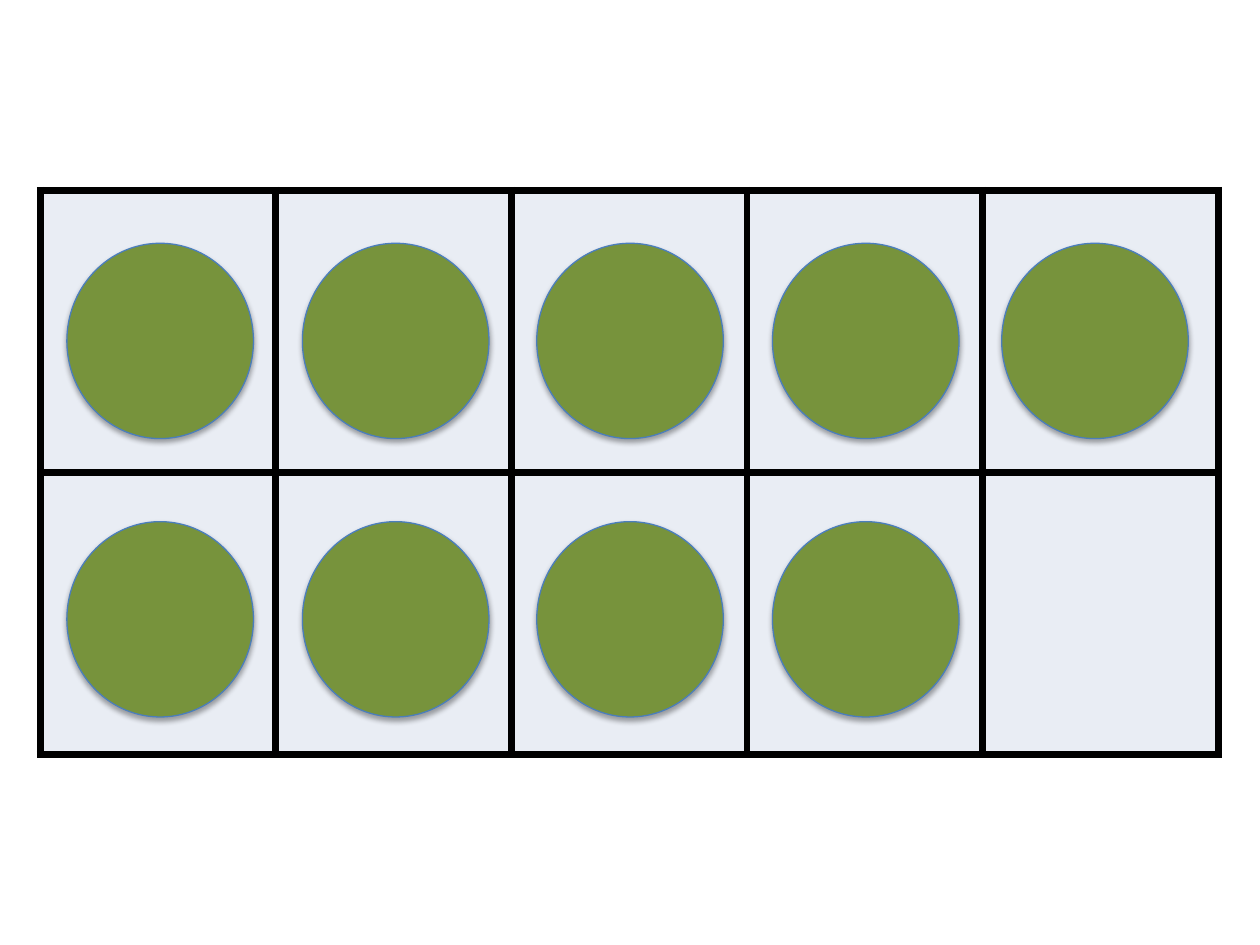
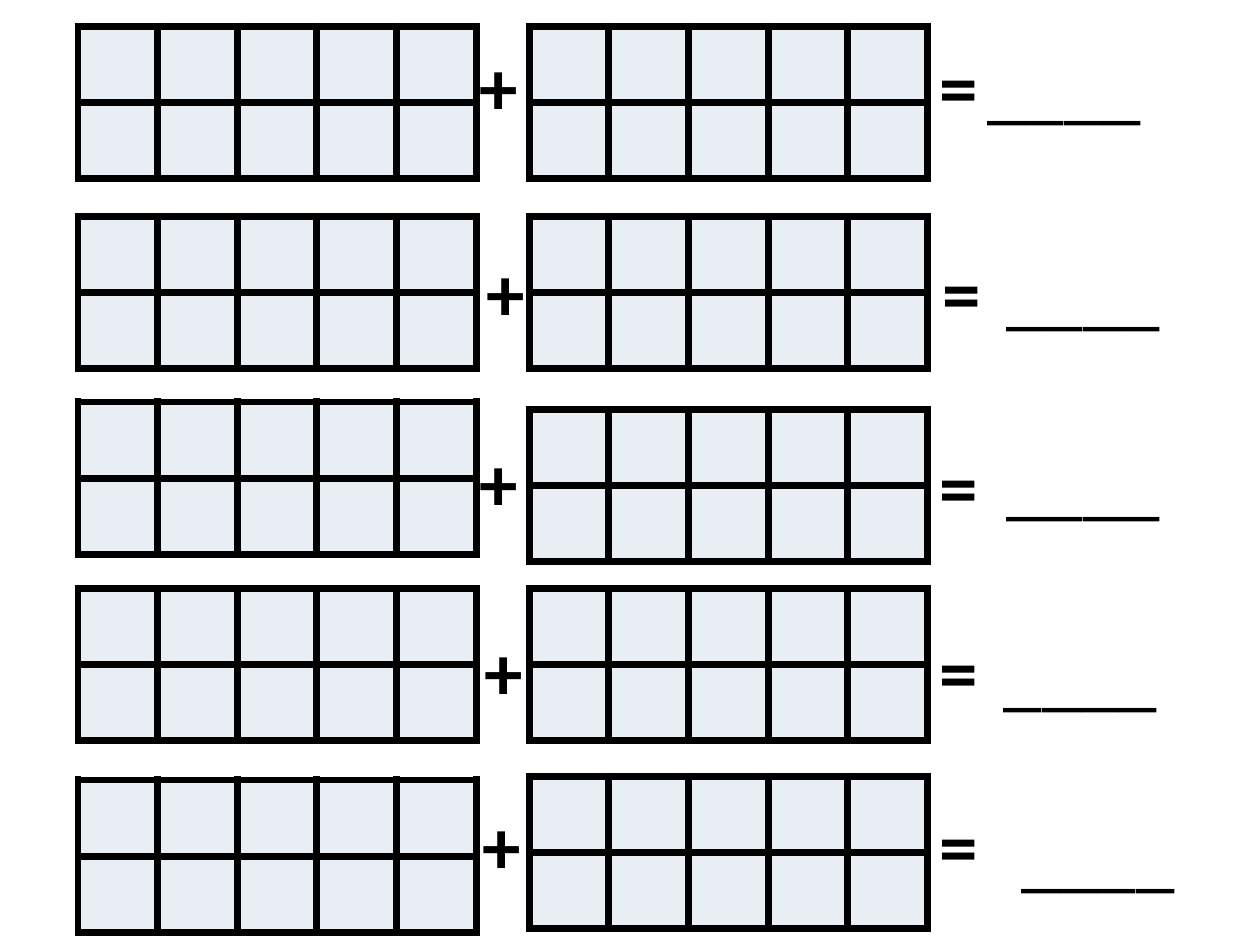
from pptx import Presentation, util as u
from pptx.dml import color
from pptx.enum import shapes, text
from pptx.oxml import parse_xml
from pptx.oxml.ns import nsdecls, qn

Pt = u.Pt
BLACK, CELL, GREEN, BLUE = "000000", "E9EDF4", "77933C", "4B7EBC"
EDGE = 4.5
COLS, ROWS = 5, 2
SIGN = {"name": "Calibri", "size": Pt(44), "bold": True}
BLANK = {**SIGN, "bold": False}

# Ten frame with counters: left edges by column, tops by row
DOT_X = [38.2, 172.8, 306.7, 441.4, 572.4]
DOT_Y = [139, 298.1]
DOTS = 9

# Addition rows: tops of both frames, then plus, equals and answer corners
SUMS = [
    (15.1, 15.1, (267.1, 18.7), (529.9, 18.7), (557.3, 18.7), "____"),
    (123.8, 123.8, (270.7, 136.1), (531.4, 136.1), (568.1, 136.1), "____"),
    (229.7, 234, (267.1, 244.8), (529.9, 247), (568.1, 244.8), "____"),
    (336.2, 336.2, (270, 352.8), (529.9, 352.8), (566.6, 354.2), "____"),
    (445.7, 443.5, (268.6, 452.2), (529.9, 452.2), (566.6, 457.2), " ____"),
]


def paint(fill, code):
    """Give a fill one solid colour."""
    fill.solid()
    fill.fore_color.rgb = color.RGBColor.from_string(code)


def style(item, values):
    for key, value in values.items():
        setattr(item, key, value)


def border(cell):
    """Draw the four edges of a cell."""
    props = cell._tc.get_or_add_tcPr()
    for spot, side in enumerate("LRTB"):
        props.insert(spot, parse_xml(
            f'<a:ln{side} {nsdecls("a")} w="{Pt(EDGE)}"><a:solidFill>'
            f'<a:srgbClr val="{BLACK}"/></a:solidFill></a:ln{side}>'))


def frame(slide, left, top, width, height):
    """Add an empty ten frame."""
    grid = slide.shapes.add_table(
        ROWS, COLS, Pt(left), Pt(top), Pt(width), Pt(height)).table
    style(grid, {"first_row": False, "horz_banding": False})
    for col in grid.columns:
        col.width = Pt(width / COLS)
    for row in grid.rows:
        row.height = Pt(height / ROWS)
    for cell in grid.iter_cells():
        paint(cell.fill, CELL)
        border(cell)


def dot(slide, left, top):
    """Add a round counter with a soft shadow below it."""
    disc = slide.shapes.add_shape(
        shapes.MSO_SHAPE.OVAL, Pt(left), Pt(top), Pt(106.6), Pt(111.6))
    paint(disc.fill, GREEN)
    paint(disc.line.fill, BLUE)
    disc.line.width = Pt(0.75)
    disc.shadow.inherit = False
    disc._element.spPr.find(qn("a:effectLst")).append(parse_xml(
        f'<a:outerShdw {nsdecls("a")} blurRad="{Pt(3.1)}" dist="{Pt(1.8)}" '
        f'dir="5400000" rotWithShape="0"><a:srgbClr val="{BLACK}">'
        '<a:alpha val="35000"/></a:srgbClr></a:outerShdw>'))


def label(slide, words, spot, width, font, wrap=False):
    """Add one line of large text."""
    left, top = spot
    box = slide.shapes.add_textbox(Pt(left), Pt(top), Pt(width), Pt(60.5))
    style(box.text_frame, {
        "word_wrap": wrap,
        "auto_size": text.MSO_AUTO_SIZE.SHAPE_TO_FIT_TEXT})
    run = box.text_frame.paragraphs[0].add_run()
    run.text = words
    style(run.font, font)
    paint(run.font.fill, BLACK)


def main():
    deck = Presentation()
    style(deck, {"slide_width": Pt(720), "slide_height": Pt(540)})
    bare = deck.slide_layouts[6]

    # Nine counters in a ten frame
    slide = deck.slides.add_slide(bare)
    frame(slide, 23, 108.7, 673.2, 322.6)
    for count in range(DOTS):
        row, col = divmod(count, COLS)
        dot(slide, DOT_X[col], DOT_Y[row])

    # Five additions with empty frames
    slide = deck.slides.add_slide(bare)
    for first, second, plus, equal, answer, line in SUMS:
        frame(slide, 44.6, first, 227.5, 87)
        frame(slide, 302.4, second, 227.5, 87)
        label(slide, "+", plus, 36.7, SIGN)
        label(slide, "=", equal, 36.7, SIGN)
        label(slide, line, answer, 172.8, BLANK, wrap=True)

    deck.save("out.pptx")


if __name__ == "__main__":
    main()
